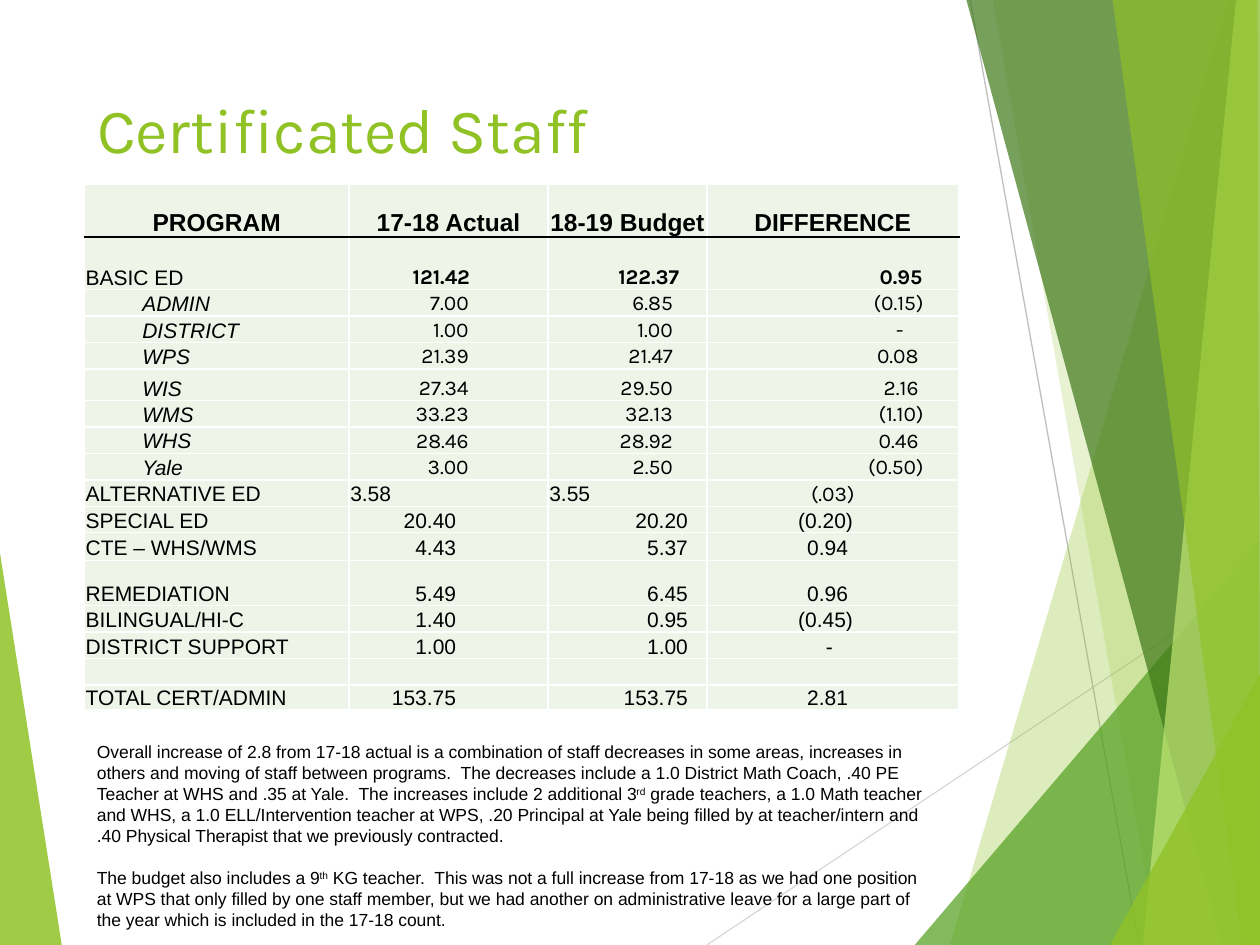
from lxml import etree
from pptx import Presentation, util as u
from pptx.dml.color import RGBColor
from pptx.enum import shapes, text
from pptx.oxml import ns

HUES = {"lime": "90C226", "green": "54A021", "dark": "3F7819", "pale": "C0E474",
        "cell": "EEF4E8", "ink": "000000", "white": "FFFFFF",
        "mist": "D9D9D9", "gray": "BFBFBF"}
SHARDS = [
    ("lime", 85, [(0, 4.39), (0.49, 7.5), (0, 7.5)]),
    ("lime", 30, [(9.75, 0), (7.54, 7.5), (10, 7.5), (10, 0)]),
    ("lime", 20, [(7.88, 0), (9.19, 7.5), (10, 7.5), (10, 0)]),
    ("green", 72, [(7.26, 7.5), (10, 4.29), (10, 7.5)]),
    ("dark", 70, [(7.67, 0), (9.7, 7.5), (10, 7.5), (10, 0)]),
    ("pale", 70, [(9.81, 0), (9.07, 7.5), (10, 7.5), (10, 0)]),
    ("lime", 65, [(8.83, 0), (9.86, 7.5), (10, 7.5), (9.98, 0)]),
    ("lime", 80, [(8.81, 7.5), (10, 5.35), (10, 7.5)]),
]
RAYS = [("mist", (5.61, 7.5), (10, 4.57)), ("gray", (7.7, 0), (9.04, 7.5))]
COLS = [2.1, 1.58, 1.26, 2]
HEAD = ["PROGRAM", "17-18 Actual", "18-19 Budget", "DIFFERENCE"]
ROWS = [
    ("total", 0.42, "BASIC ED", "121.42", "122.37", "0.95"),
    ("site", 0.21, "ADMIN", "7.00", "6.85", "(0.15)"),
    ("site", 0.21, "DISTRICT", "1.00", "1.00", "-"),
    ("site", 0.21, "WPS", "21.39", "21.47", "0.08"),
    ("site", 0.25, "WIS", "27.34", "29.50", "2.16"),
    ("site", 0.21, "WMS", "33.23", "32.13", "(1.10)"),
    ("site", 0.21, "WHS", "28.46", "28.92", "0.46"),
    ("site", 0.21, "Yale", "3.00", "2.50", "(0.50)"),
    ("left", 0.21, "ALTERNATIVE ED", "3.58", "3.55", "(.03)"),
    ("plain", 0.21, "SPECIAL ED", "20.40", "20.20", "(0.20)"),
    ("plain", 0.22, "CTE – WHS/WMS", "4.43", "5.37", "0.94"),
    ("plain", 0.36, "REMEDIATION", "5.49", "6.45", "0.96"),
    ("plain", 0.21, "BILINGUAL/HI-C", "1.40", "0.95", "(0.45)"),
    ("plain", 0.21, "DISTRICT SUPPORT", "1.00", "1.00", "-"),
    ("plain", 0.21, "", "", "", ""),
    ("plain", 0.19, "TOTAL CERT/ADMIN", "153.75", "153.75", "2.81"),
]
PADS = {"total": (0.62, 0.22, 0.29), "site": (0.63, 0.27, 0.32),
        "plain": (0.73, 0.15, 0.88)}
NOTES = [
    ("Overall increase of 2.8 from 17-18 actual is a combination of staff decreases in some "
     "areas, increases in others and moving of staff between programs.  The decreases include "
     "a 1.0 District Math Coach, .40 PE Teacher at WHS and .35 at Yale.  The increases include "
     "2 additional 3", "rd",
     " grade teachers, a 1.0 Math teacher and WHS, a 1.0 ELL/Intervention teacher at WPS, "
     ".20 Principal at Yale being filled by at teacher/intern and .40 Physical Therapist that "
     "we previously contracted."),
    ("The budget also includes a 9", "th",
     " KG teacher.  This was not a full increase from 17-18 as we had one position at WPS that "
     "only filled by one staff member, but we had another on administrative leave for a large "
     "part of the year which is included in the 17-18 count."),
]


def tint(hue):
    """Return the colour object of a named hue."""
    return RGBColor.from_string(HUES[hue])


def style(par, size, name="Arial", hue="ink", bold=False, slant=False):
    """Set the font of a whole paragraph."""
    font = par.font
    font.size, font.name, font.bold, font.italic = u.Pt(size), name, bold, slant
    font.color.rgb = tint(hue)


def decor(slide, box):
    """Draw the thin rays and the translucent shards."""
    left, top = box[:2]

    def spot(pt):
        """Turn a point of the box into slide lengths."""
        return u.Inches(left + pt[0]), u.Inches(top + pt[1])

    for hue, start, end in RAYS:
        ray = slide.shapes.add_connector(shapes.MSO_CONNECTOR.STRAIGHT, *spot(start), *spot(end))
        ray.line.color.rgb, ray.line.width = tint(hue), u.Pt(0.75)
        etree.SubElement(ray._element.spPr, ns.qn("a:effectLst"))
    for hue, alpha, pts in SHARDS:
        form = slide.shapes.build_freeform(*spot(pts[0]), scale=1.0)
        form.add_line_segments([spot(pt) for pt in pts[1:]], close=True)
        shard = form.convert_to_shape()
        shard.shadow.inherit = False
        shard.line.fill.background()
        shard.fill.solid()
        shard.fill.fore_color.rgb = tint(hue)
        paint = shard._element.spPr.find(".//" + ns.qn("a:srgbClr"))
        etree.SubElement(paint, ns.qn("a:alpha"), val=str(alpha * 1000))


def title(slide, box):
    """Place and format the title."""
    head = slide.shapes.title
    head.left, head.top, head.width, head.height = map(u.Inches, box)
    head.text_frame.text = "Certificated Staff"
    head.text_frame.vertical_anchor = text.MSO_ANCHOR.TOP
    par = head.text_frame.paragraphs[0]
    par.alignment = text.PP_ALIGN.LEFT
    style(par, 36, "Karla", "lime")


def edge(cell, sides):
    """Give a cell one-point borders, from side to hue."""
    props = cell._tc.get_or_add_tcPr()
    for spot, (side, hue) in enumerate(sides.items()):
        line = etree.Element(ns.qn("a:ln" + side), w="12700")
        fill = etree.SubElement(line, ns.qn("a:solidFill"))
        etree.SubElement(fill, ns.qn("a:srgbClr"), val=HUES[hue])
        props.insert(spot, line)


def entry(cell, kind, col, words):
    """Fill one cell according to its row kind and column."""
    cell.fill.solid()
    cell.fill.fore_color.rgb = tint("cell")
    cell.vertical_anchor = text.MSO_ANCHOR.BOTTOM
    cell.margin_left = cell.margin_right = cell.margin_top = u.Inches(0.01)
    cell.margin_bottom = 0
    cell.text = words
    par = cell.text_frame.paragraphs[0]
    align = text.PP_ALIGN
    if kind == "head" or (kind == "left" and col == 3):
        par.alignment = align.CENTER
    elif col and kind in PADS:
        par.alignment = align.RIGHT
        pad = PADS[kind][col - 1]
        if words == "-":
            pad += 0.12
        elif words.startswith("("):
            pad -= 0.04
        cell.margin_right = u.Inches(pad)
    elif kind == "site":
        cell.margin_left = u.Inches(0.46)
    karla = col and (kind in ("total", "site") or (kind == "left" and col == 3))
    style(par, 14 if kind == "head" else 12, "Karla" if karla else "Arial",
          bold=kind == "head" or (kind == "total" and col > 0),
          slant=kind == "site" and col == 0)
    if not words:
        par._p.get_or_add_endParaRPr().set("sz", "1200")


def staff(slide, box):
    """Build the staff table."""
    rows = [("head", 0.42, *HEAD)] + ROWS
    grid = slide.shapes.add_table(len(rows), len(COLS), *map(u.Inches, box)).table
    grid.first_row = grid.horz_banding = False
    for col, width in zip(grid.columns, COLS):
        col.width = u.Inches(width)
    for i, (kind, height, *cells) in enumerate(rows):
        grid.rows[i].height = u.Inches(height)
        for j, words in enumerate(cells):
            cell = grid.cell(i, j)
            entry(cell, kind, j, words)
            edge(cell, {"L": "white", "R": "white", "T": "ink" if i == 1 else "white",
                        "B": "ink" if i == 0 else "white"})


def notes(slide, box):
    """Write the remarks under the table."""
    frame = slide.shapes.add_textbox(*map(u.Inches, box)).text_frame
    frame.word_wrap = True
    for i, parts in enumerate(NOTES):
        par = frame.add_paragraph() if i else frame.paragraphs[0]
        style(par, 10)
        par.space_before = u.Pt(12 * i)
        for words in parts:
            run = par.add_run()
            run.text = words
            if words in ("rd", "th"):
                run.font._element.set("baseline", "30000")


def main():
    """Build and save the slide."""
    deck = Presentation()
    deck.slide_width, deck.slide_height = u.Inches(10), u.Inches(7.5)
    slide = deck.slides.add_slide(deck.slide_layouts[5])
    decor(slide, (0, 0, 10, 7.5))
    title(slide, (0.67, 0.67, 6.94, 1.44))
    staff(slide, (0.67, 1.46, 6.94, 4.23))
    notes(slide, (0.67, 5.83, 6.75, 1.62))
    deck.save("out.pptx")


if __name__ == "__main__":
    main()
